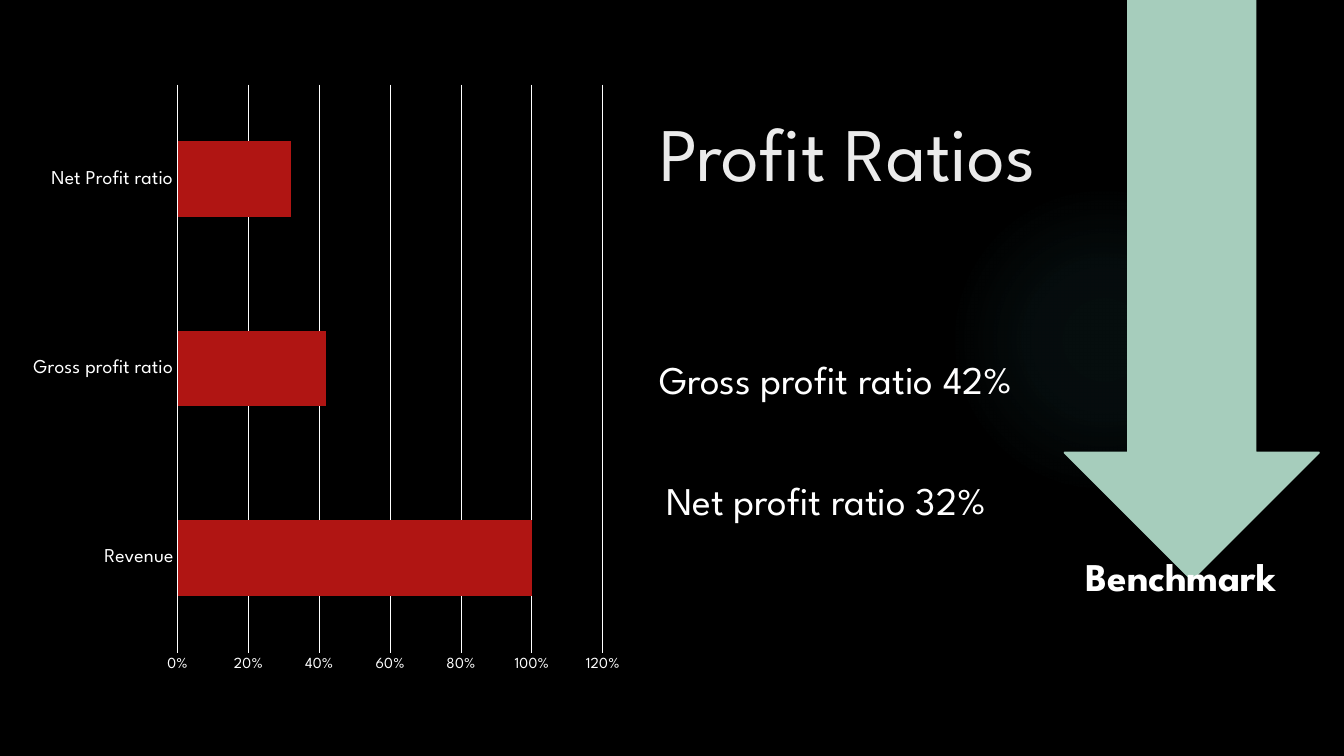
"""Build the Profit Ratios slide with its bar chart and benchmark arrow."""
from lxml import etree
from pptx import Presentation
from pptx.chart.data import CategoryChartData
from pptx.dml.color import RGBColor
from pptx.enum.chart import XL_CHART_TYPE, XL_TICK_MARK
from pptx.enum.shapes import MSO_SHAPE
from pptx.enum.text import MSO_ANCHOR, MSO_AUTO_SIZE
from pptx.oxml import parse_xml
from pptx.oxml.ns import nsdecls
from pptx.util import Inches, Pt

FONT = "League Spartan"
WHITE, MINT, RED, TEAL = "FFFFFF", "A6CDBC", "B01513", "50B9C1"


def color(value):
    return RGBColor.from_string(value)


def style(font, size, value=WHITE, bold=False):
    font.name = FONT
    font.size = Pt(size)
    font.bold = bold
    font.color.rgb = color(value)


presentation = Presentation()
presentation.slide_width = Inches(13.33)
presentation.slide_height = Inches(7.5)
slide = presentation.slides.add_slide(presentation.slide_layouts[6])
slide.background.fill.solid()
slide.background.fill.fore_color.rgb = color("000000")

glow = slide.shapes.add_shape(
    MSO_SHAPE.OVAL, Inches(9.41), Inches(1.83), Inches(3.08), Inches(3.08))
glow.shadow.inherit = False
glow.line.fill.background()
stops = "".join(
    f'<a:gs pos="{position * 1000}"><a:srgbClr val="{TEAL}">'
    f'<a:alpha val="{opacity * 1000}"/></a:srgbClr></a:gs>'
    for position, opacity in [(0, 7), (36, 6), (69, 0)])
gradient = parse_xml(
    f'<a:gradFill {nsdecls("a")}><a:gsLst>{stops}</a:gsLst><a:path path="circle">'
    '<a:fillToRect l="50000" t="50000" r="50000" b="50000"/></a:path></a:gradFill>')
glow._element.spPr.find("{*}prstGeom").addnext(gradient)

for preset, left, width, height in [
        (MSO_SHAPE.RECTANGLE, 11.41, 0.75, 1.25),
        (MSO_SHAPE.DOWN_ARROW, 10.56, 2.52, 5.75)]:
    shape = slide.shapes.add_shape(
        preset, Inches(left), Inches(0), Inches(width), Inches(height))
    shape.shadow.inherit = False
    shape.fill.solid()
    shape.fill.fore_color.rgb = color(MINT)
    shape.line.fill.background()
arrow = shape
arrow.line.color.rgb = color(MINT)
arrow.line.width = Pt(1.5)

benchmark = slide.shapes.add_textbox(
    Inches(10.67), Inches(5.43), Inches(2.38), Inches(0.57)).text_frame
benchmark.word_wrap = False
benchmark.auto_size = MSO_AUTO_SIZE.SHAPE_TO_FIT_TEXT
benchmark.text = "Benchmark"
style(benchmark.paragraphs[0].font, 28, bold=True)

title = slide.shapes.add_textbox(
    Inches(6.44), Inches(1), Inches(5.45), Inches(1.61)).text_frame
title.word_wrap = True
title.vertical_anchor = MSO_ANCHOR.TOP
title.text = "Profit Ratios"
style(title.paragraphs[0].font, 54, "EBEBEB")

ratios = slide.shapes.add_textbox(
    Inches(6.44), Inches(2.27), Inches(4.87), Inches(4.28)).text_frame
ratios.word_wrap = True
ratios.margin_top = Inches(1.25)
ratios.text = "Gross profit ratio 42%\nNet profit ratio 32%"
for paragraph in ratios.paragraphs:
    style(paragraph.font, 28)
net_ratio = ratios.paragraphs[1]
net_ratio.space_before = Pt(53)
net_ratio._p.get_or_add_pPr().set("marL", str(Inches(0.07)))

chart_data = CategoryChartData(number_format="0%")
chart_data.categories = ["Revenue", "Gross profit ratio", "Net Profit ratio"]
chart_data.add_series("Series 1", [1, 0.42, 0.32])
chart = slide.shapes.add_chart(
    XL_CHART_TYPE.BAR_CLUSTERED, Inches(0.21), Inches(0.72),
    Inches(6.06), Inches(6.06), chart_data).chart
chart.has_legend = False
chart.has_title = False
style(chart.font, 10)
plot = chart.plots[0]
plot.gap_width = 150
plot.vary_by_categories = False
bars = plot.series[0].format.fill
bars.solid()
bars.fore_color.rgb = color(RED)

for axis, size in [(chart.category_axis, 14), (chart.value_axis, 11)]:
    axis.major_tick_mark = XL_TICK_MARK.NONE
    axis.minor_tick_mark = XL_TICK_MARK.NONE
    axis.format.line.fill.background()
    style(axis.tick_labels.font, size)
chart.category_axis.has_major_gridlines = False
value_axis = chart.value_axis
value_axis.minimum_scale = 0
value_axis.maximum_scale = 1.2
value_axis.major_unit = 0.2
value_axis.tick_labels.number_format = "0%"
value_axis.tick_labels.number_format_is_linked = False
value_axis.has_major_gridlines = True
gridline = value_axis.major_gridlines.format.line
gridline.color.rgb = color(WHITE)
gridline.width = Pt(0.75)

presentation.save("out.pptx")
